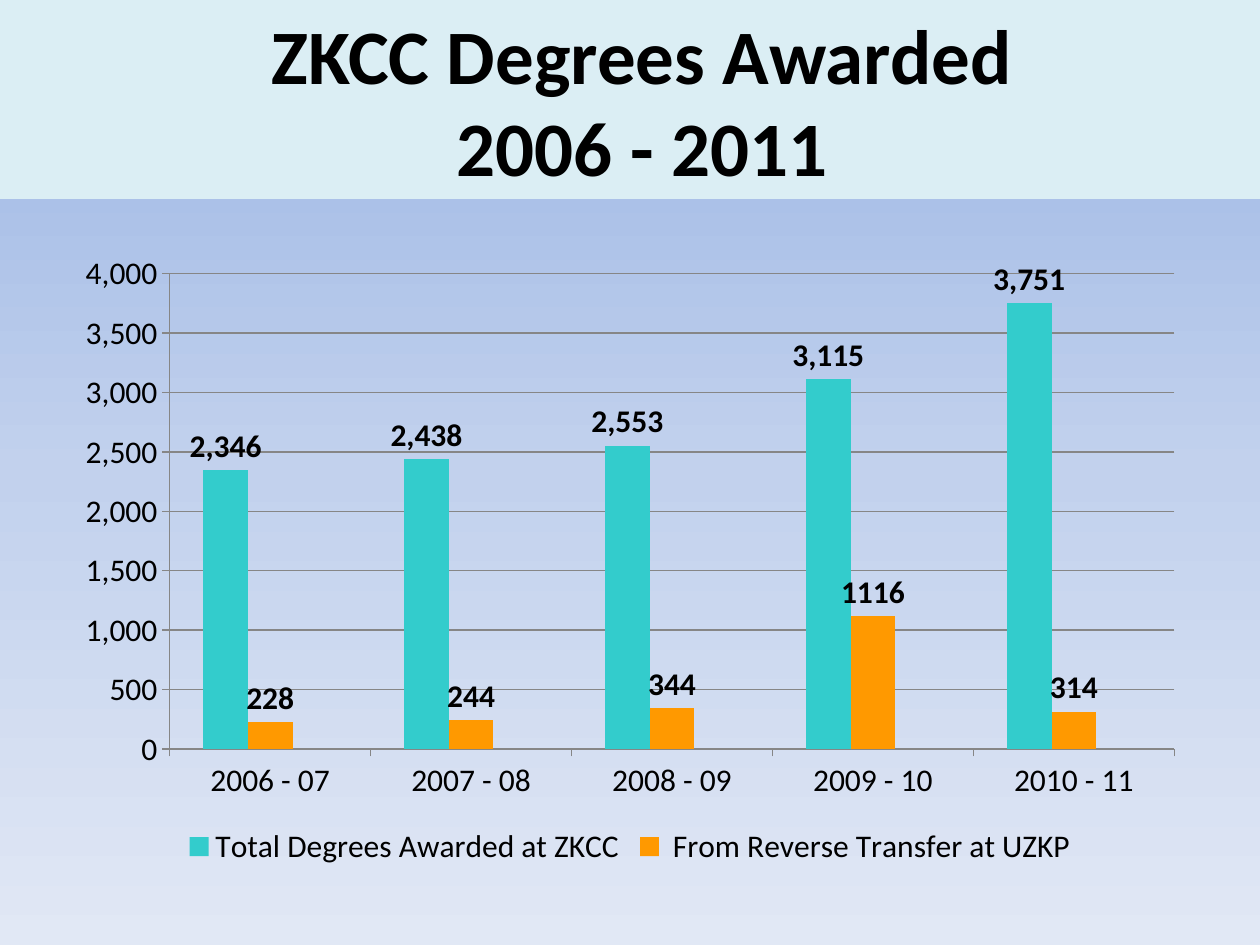
from copy import deepcopy

from lxml import etree
from pptx import Presentation
from pptx.chart.data import CategoryChartData
from pptx.dml.color import RGBColor
from pptx.enum import chart as ch, shapes, text
from pptx.oxml.ns import qn
from pptx.util import Cm, Pt

# Content
TITLE = "ZKCC Degrees Awarded\v2006 - 2011"
YEARS = ["2006 - 07", "2007 - 08", "2008 - 09", "2009 - 10", "2010 - 11"]
TEAL = RGBColor(0x33, 0xCC, 0xCC)
ORANGE = RGBColor(0xFF, 0x99, 0x00)
GREEN = RGBColor(0x9B, 0xBB, 0x59)
DEGREES = [  # name, values, colour, label format
    ("Total Degrees Awarded at ZKCC", [2346, 2438, 2553, 3115, 3751], TEAL, "#,##0"),
    (" From Reverse Transfer at UZKP", [228, 244, 344, 1116, 314], ORANGE, "General"),
    ("Series 3", [None] * len(YEARS), GREEN, None),  # empty third slot
]
EMPTY_SERIES = 2

# Style
FONT = "Calibri"
BLACK = RGBColor(0, 0, 0)
GRAY = RGBColor(0x86, 0x86, 0x86)
PALE_TEAL = RGBColor(0xDB, 0xEE, 0xF4)
SKY = [(0, RGBColor(0x9A, 0xB5, 0xE4)),
       (0.5, RGBColor(0xC2, 0xD1, 0xED)),
       (1, RGBColor(0xE1, 0xE8, 0xF5))]
WIDTH, HEIGHT = Cm(25.4), Cm(19.05)


def style_font(font, size, bold=False):
    font.name, font.size, font.bold = FONT, Pt(size), bold
    font.color.rgb = BLACK


def paint_background(slide):
    fill = slide.background.fill
    fill.gradient()
    fill.gradient_angle = 270
    stop_list = slide.element.find(".//" + qn("a:gsLst"))
    stop_list.insert(1, deepcopy(stop_list[0]))
    for stop, (position, colour) in zip(fill.gradient_stops, SKY):
        stop.position = position
        stop.color.rgb = colour


def add_title(slide):
    banner = slide.shapes.add_shape(shapes.MSO_SHAPE.RECTANGLE, 0, 0, WIDTH, Cm(4.01))
    banner.shadow.inherit = False
    banner.fill.solid()
    banner.fill.fore_color.rgb = PALE_TEAL
    banner.line.fill.background()
    frame = banner.text_frame
    frame.word_wrap = True
    frame.vertical_anchor = text.MSO_ANCHOR.MIDDLE
    frame.margin_left = Cm(0.75)
    frame.text = TITLE
    heading = frame.paragraphs[0]
    heading.alignment = text.PP_ALIGN.CENTER
    for run in heading.runs:
        style_font(run.font, 44, bold=True)


def add_degrees_chart(slide):
    data = CategoryChartData()
    data.categories = YEARS
    for name, values, _, _ in DEGREES:
        data.add_series(name, values)
    chart = slide.shapes.add_chart(ch.XL_CHART_TYPE.COLUMN_CLUSTERED,
                                   Cm(1.27), Cm(4.88), Cm(22.86), Cm(12.7), data).chart
    chart.has_title = False
    style_font(chart.font, 18)

    # Columns and value labels
    plot = chart.plots[0]
    plot.vary_by_categories = False
    plot.gap_width, plot.overlap = 150, 0
    for series, (_, _, colour, label_format) in zip(plot.series, DEGREES):
        series.format.fill.solid()
        series.format.fill.fore_color.rgb = colour
        if label_format:
            labels = series.data_labels
            labels.show_value = True
            labels.position = ch.XL_LABEL_POSITION.OUTSIDE_END
            labels.number_format = label_format
            labels.number_format_is_linked = False
            style_font(labels.font, 18, bold=True)

    # Axes
    for axis in (chart.category_axis, chart.value_axis):
        axis.major_tick_mark = ch.XL_TICK_MARK.OUTSIDE
        axis.format.line.color.rgb = GRAY
    counts = chart.value_axis
    counts.minimum_scale, counts.maximum_scale, counts.major_unit = 0, 4000, 500
    counts.tick_labels.number_format = "#,##0"
    counts.tick_labels.number_format_is_linked = False
    counts.has_major_gridlines = True
    counts.major_gridlines.format.line.color.rgb = GRAY

    # Legend, without the empty series
    chart.has_legend = True
    legend = chart.legend
    legend.position = ch.XL_LEGEND_POSITION.BOTTOM
    legend.include_in_layout = False
    entry = etree.Element(qn("c:legendEntry"))
    etree.SubElement(entry, qn("c:idx")).set("val", str(EMPTY_SERIES))
    etree.SubElement(entry, qn("c:delete")).set("val", "1")
    chart.element.find(".//" + qn("c:legendPos")).addnext(entry)


def main():
    deck = Presentation()
    deck.slide_width, deck.slide_height = WIDTH, HEIGHT
    slide = deck.slides.add_slide(deck.slide_layouts[6])
    paint_background(slide)
    add_title(slide)
    add_degrees_chart(slide)
    deck.save("out.pptx")


if __name__ == "__main__":
    main()
